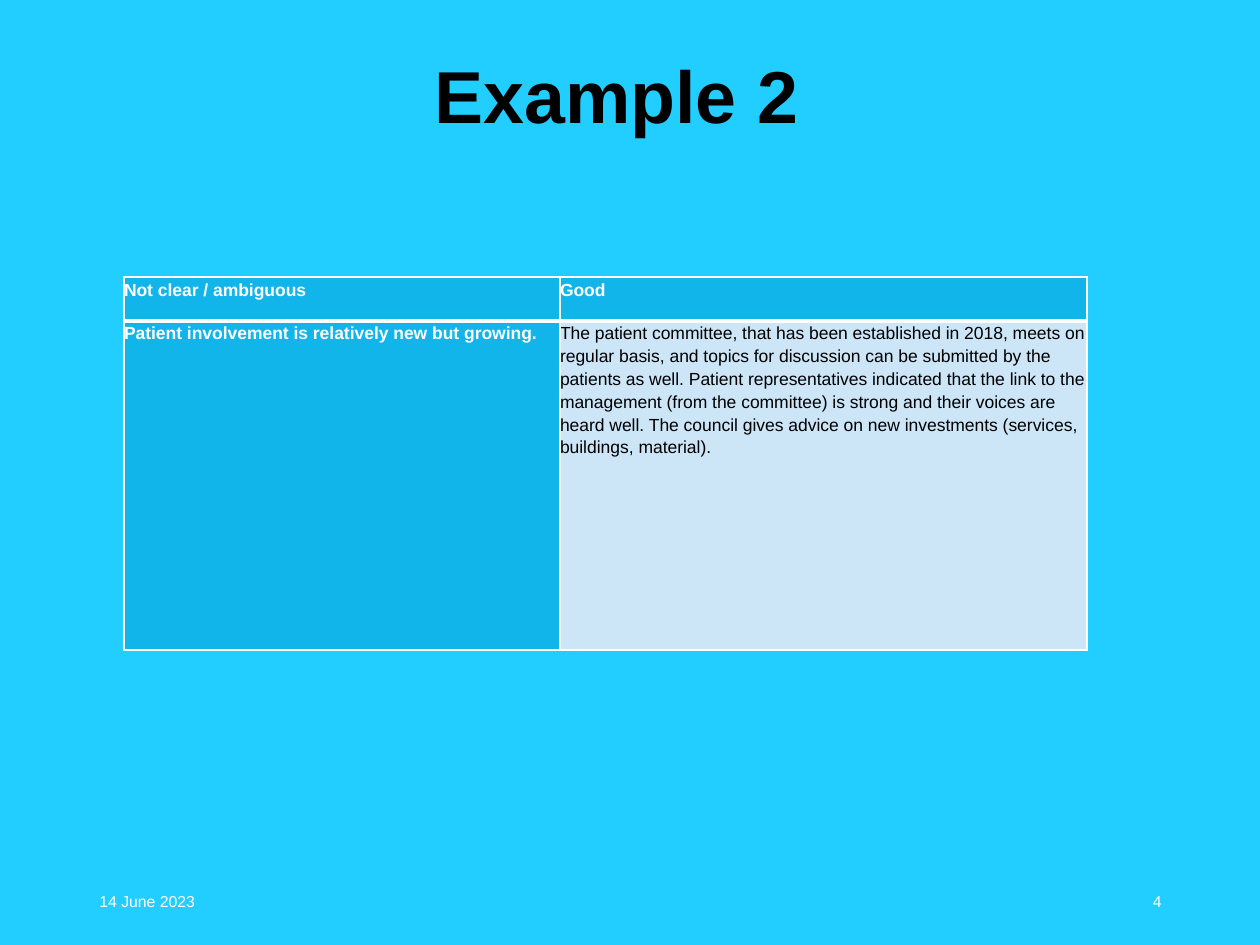
from lxml import etree
from pptx import Presentation
from pptx import util as u
from pptx.dml.color import RGBColor
from pptx.enum import text
from pptx.oxml import ns

PX_PER_INCH = 126
WHITE, BLACK = "FFFFFF", "000000"
SKY, BLUE, PALE = "21CEFF", "11B5E9", "CCE5F7"


def px(length):
    return u.Emu(round(length * 914400 / PX_PER_INCH))


def color(value):
    return RGBColor.from_string(value)


def write(frame, words, size=10, ink=WHITE, bold=False, align="LEFT",
          spacing=1.0, anchor="TOP"):
    frame.word_wrap = True
    frame.vertical_anchor = getattr(text.MSO_ANCHOR, anchor)
    para = frame.paragraphs[0]
    para.alignment = getattr(text.PP_ALIGN, align)
    para.line_spacing = spacing
    span = para.add_run()
    span.text = words
    span.font.name = "Arial"
    span.font.size = u.Pt(size)
    span.font.bold = bold
    span.font.color.rgb = color(ink)


def add_border(cell, side, points):
    properties = cell._tc.get_or_add_tcPr()
    line = etree.SubElement(properties, ns.qn(f"a:ln{side}"), w=str(u.Pt(points)))
    fill = etree.SubElement(line, ns.qn("a:solidFill"))
    etree.SubElement(fill, ns.qn("a:srgbClr"), val=WHITE)


class SlideBuilder:
    def __init__(self, deck, background):
        self.page = deck.slides.add_slide(deck.slide_layouts[6])
        fill = self.page.background.fill
        fill.solid()
        fill.fore_color.rgb = color(background)

    def label(self, words, left, top, width, height, **style):
        box = self.page.shapes.add_textbox(*map(px, (left, top, width, height)))
        write(box.text_frame, words, anchor="MIDDLE", **style)

    def table(self, left, top, widths, heights):
        frame = self.page.shapes.add_table(
            len(heights), len(widths),
            *map(px, (left, top, sum(widths), sum(heights))))
        for column, width in zip(frame.table.columns, widths):
            column.width = px(width)
        for row, height in zip(frame.table.rows, heights):
            row.height = px(height)
        return frame.table

    def cell(self, cell, words, fill, borders, **style):
        cell.margin_left = cell.margin_right = 0
        cell.margin_top = cell.margin_bottom = 0
        for side in "LRTB":
            add_border(cell, side, borders.get(side, 1))
        cell.fill.solid()
        cell.fill.fore_color.rgb = color(fill)
        write(cell.text_frame, words, spacing=u.Pt(13), **style)


def main():
    deck = Presentation()
    deck.slide_width, deck.slide_height = px(1260), px(945)
    slide = SlideBuilder(deck, SKY)

    # Title
    slide.label("Example 2", 81, 21, 1071, 158, size=42, ink=BLACK, bold=True,
                align="CENTER", spacing=0.9)

    # Comparison table, with a thick rule under the header
    rows = [
        ("Not clear / ambiguous", "Good"),
        ("Patient involvement is relatively new but growing.",
         "The patient committee, that has been established in 2018, meets on "
         "regular basis, and topics for discussion can be submitted by the "
         "patients as well. Patient representatives indicated that the link to "
         "the management (from the committee) is strong and their voices are "
         "heard well. The council gives advice on new investments (services, "
         "buildings, material)."),
    ]
    table = slide.table(124, 277, widths=(436, 527), heights=(44, 329))
    for r, row in enumerate(rows):
        borders = {"T": 3} if r else {"B": 3}
        for c, words in enumerate(row):
            plain = r > 0 and c > 0
            slide.cell(table.cell(r, c), words, PALE if plain else BLUE, borders,
                       ink=BLACK if plain else WHITE, bold=not plain)

    # Footer
    slide.label("14 June 2023", 87, 876, 284, 50, size=9)
    slide.label("4", 890, 876, 284, 50, size=9, align="RIGHT")

    deck.save("out.pptx")


if __name__ == "__main__":
    main()
